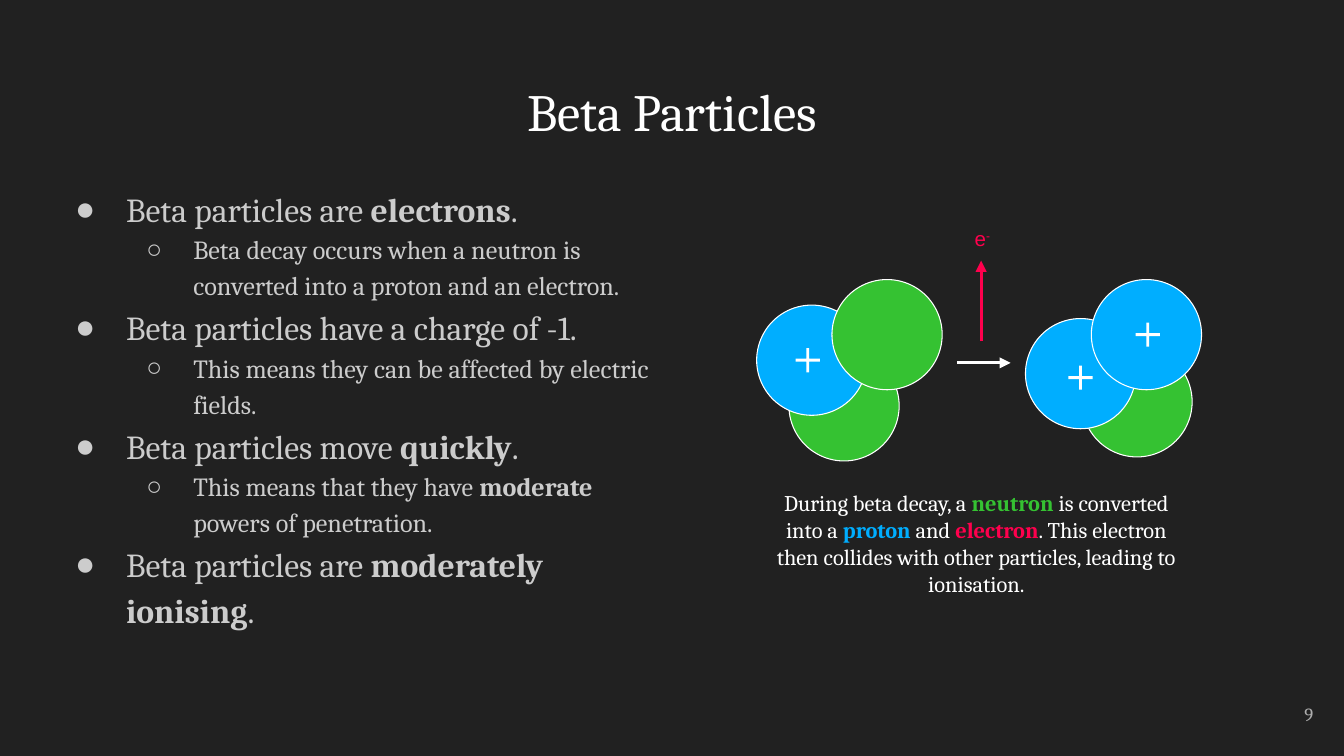
from collections import namedtuple
from dataclasses import dataclass

from lxml import etree
from pptx import Presentation
from pptx.dml.color import RGBColor
from pptx.enum.shapes import MSO_CONNECTOR, MSO_SHAPE
from pptx.enum.text import MSO_ANCHOR, PP_ALIGN
from pptx.oxml.ns import qn
from pptx.util import Inches, Pt

OVAL, CROSS = MSO_SHAPE.OVAL, MSO_SHAPE.CROSS
STRAIGHT = MSO_CONNECTOR.STRAIGHT
LEFT, CENTER, RIGHT = PP_ALIGN.LEFT, PP_ALIGN.CENTER, PP_ALIGN.RIGHT
TOP, MIDDLE = MSO_ANCHOR.TOP, MSO_ANCHOR.MIDDLE

Box = namedtuple("Box", "left top width height")
Level = namedtuple("Level", "bullet margin indent size")


@dataclass(frozen=True)
class Theme:
    """Colours, fonts and type sizes of the slide."""
    background: str = "212121"
    white: str = "FFFFFF"
    body: str = "CCCCCC"
    muted: str = "ADADAD"
    neutron: str = "35C232"
    proton: str = "00AEFF"
    electron: str = "FF004D"
    serif: str = "Cambria"
    sans: str = "Arial"
    title_size: int = 28
    point_size: int = 18
    detail_size: int = 14
    caption_size: int = 12
    label_size: int = 11
    number_size: int = 10


THEME = Theme()
LEVELS = (
    Level("●", 0.5, -0.38, THEME.point_size),
    Level("○", 1, -0.35, THEME.detail_size),
)
POINTS = (
    (0, ("Beta particles are ", "electrons", ".")),
    (1, ("Beta decay occurs when a neutron is converted into a proton and an electron.",)),
    (0, ("Beta particles have a charge of -1.",)),
    (1, ("This means they can be affected by electric fields.",)),
    (0, ("Beta particles move ", "quickly", ".")),
    (1, ("This means that they have ", "moderate ", "powers of penetration.")),
    (0, ("Beta particles are ", "moderately ionising", ".")),
)
CAPTION = (
    ("During beta decay, a ", THEME.white),
    ("neutron ", THEME.neutron),
    ("is converted into a ", THEME.white),
    ("proton ", THEME.proton),
    ("and ", THEME.white),
    ("electron", THEME.electron),
    (". This electron then collides with other particles, leading to ionisation.", THEME.white),
)
BEFORE_DECAY = (
    (0.7, 1.43, THEME.neutron, None),
    (0.46, 1.09, THEME.proton, (-0.03, 0)),
    (1.02, 0.9, THEME.neutron, None),
)
AFTER_DECAY = (
    (2.88, 1.4, THEME.neutron, None),
    (2.46, 1.19, THEME.proton, (0, 0.03)),
    (2.95, 0.9, THEME.proton, (0.01, 0)),
)


def add_frame(page, box, anchor=TOP):
    """Add a wrapping text box and return its text frame."""
    frame = page.shapes.add_textbox(*map(Inches, box)).text_frame
    frame.word_wrap = True
    frame.vertical_anchor = anchor
    frame.margin_left = frame.margin_right = Inches(0.1)
    frame.margin_top = frame.margin_bottom = Inches(0.1)
    return frame


def add_span(para, text, size, color=THEME.white, font=THEME.serif, bold=False, raised=False):
    """Append formatted text to a paragraph."""
    span = para.add_run()
    span.text = text
    span.font.size = Pt(size)
    span.font.name = font
    span.font.bold = bold
    span.font.color.rgb = RGBColor.from_string(color)
    if raised:
        span.font._element.set("baseline", "30000")


def add_line_of_text(page, box, text, align, anchor=TOP, **style):
    """Add a text box with one uniformly formatted paragraph."""
    para = add_frame(page, box, anchor).paragraphs[0]
    para.alignment = align
    add_span(para, text, **style)
    return para


def set_bullet(para, level):
    """Give a paragraph its hanging indent and bullet."""
    props = para._p.get_or_add_pPr()
    props.set("marL", str(Inches(level.margin)))
    props.set("indent", str(Inches(level.indent)))
    color = etree.SubElement(props, qn("a:buClr"))
    etree.SubElement(color, qn("a:srgbClr"), val=THEME.body)
    etree.SubElement(props, qn("a:buFont"), typeface=THEME.sans)
    etree.SubElement(props, qn("a:buChar"), char=level.bullet)


def add_points(page, box):
    """Place the two-level bullet list, with every second span bold."""
    frame = add_frame(page, box)
    for index, (depth, spans) in enumerate(POINTS):
        para = frame.add_paragraph() if index else frame.paragraphs[0]
        para.alignment = LEFT
        para.level = depth
        para.line_spacing = 1.15
        set_bullet(para, LEVELS[depth])
        for order, text in enumerate(spans):
            add_span(para, text, LEVELS[depth].size, THEME.body, bold=order % 2 == 1)


def add_centered_shape(page, kind, x, y, size, fill):
    """Add a filled square-proportioned shape around a centre point."""
    box = Box(x - size / 2, y - size / 2, size, size)
    shape = page.shapes.add_shape(kind, *map(Inches, box))
    shape.shadow.inherit = False
    shape.fill.solid()
    shape.fill.fore_color.rgb = RGBColor.from_string(fill)
    shape.line.fill.background()
    return shape


def add_nucleus(page, box, particles):
    """Draw overlapping particles, with a plus sign on each proton."""
    for x, y, color, sign in particles:
        x, y = box.left + x, box.top + y
        ball = add_centered_shape(page, OVAL, x, y, 0.82, color)
        ball.line.color.rgb = RGBColor.from_string(THEME.white)
        ball.line.width = Pt(0.56)
        if sign:
            plus = add_centered_shape(page, CROSS, x + sign[0], y + sign[1], 0.18, THEME.white)
            plus.adjustments[0] = 0.44


def add_arrow(page, start, end, color):
    """Draw a straight arrow between two points."""
    arrow = page.shapes.add_connector(STRAIGHT, *map(Inches, start + end))
    arrow.line.color.rgb = RGBColor.from_string(color)
    arrow.line.width = Pt(1.5)
    etree.SubElement(arrow.line._get_or_add_ln(), qn("a:tailEnd"), type="triangle")
    etree.SubElement(arrow._element.spPr, qn("a:effectLst"))


def add_decay_diagram(page, box):
    """Place both nuclei, the arrows, the electron label and the caption."""
    left, top = box.left, box.top
    add_nucleus(page, box, AFTER_DECAY)
    add_nucleus(page, box, BEFORE_DECAY)
    add_arrow(page, (left + 1.72, top + 0.95), (left + 1.72, top + 0.35), THEME.electron)
    add_arrow(page, (left + 1.54, top + 1.11), (left + 1.94, top + 1.11), THEME.white)
    style = dict(size=THEME.label_size, color=THEME.electron, font=THEME.sans)
    label = add_line_of_text(page, Box(left + 1.53, top, 0.4, 0.39), "e", CENTER, **style)
    add_span(label, "-", raised=True, **style)
    caption = add_frame(page, Box(left + 0.07, top + 1.95, 3.23, 1.01)).paragraphs[0]
    caption.alignment = CENTER
    for text, color in CAPTION:
        add_span(caption, text, THEME.caption_size, color, bold=color != THEME.white)


def build_slide(deck):
    """Add the beta particles slide to the deck."""
    page = deck.slides.add_slide(deck.slide_layouts[6])
    page.background.fill.solid()
    page.background.fill.fore_color.rgb = RGBColor.from_string(THEME.background)
    add_line_of_text(page, Box(0.34, 0.49, 9.32, 0.63), "Beta Particles", CENTER,
                     size=THEME.title_size)
    add_points(page, Box(0.34, 1.26, 4.76, 3.84))
    add_line_of_text(page, Box(9.27, 5.1, 0.6, 0.43), "9", RIGHT, MIDDLE,
                     size=THEME.number_size, color=THEME.muted)
    add_decay_diagram(page, Box(5.58, 1.59, 3.36, 2.96))


def main():
    """Build and save a deck with 16:9 pages."""
    deck = Presentation()
    deck.slide_width = Inches(10)
    deck.slide_height = deck.slide_width * 9 // 16
    build_slide(deck)
    deck.save("out.pptx")


if __name__ == "__main__":
    main()
